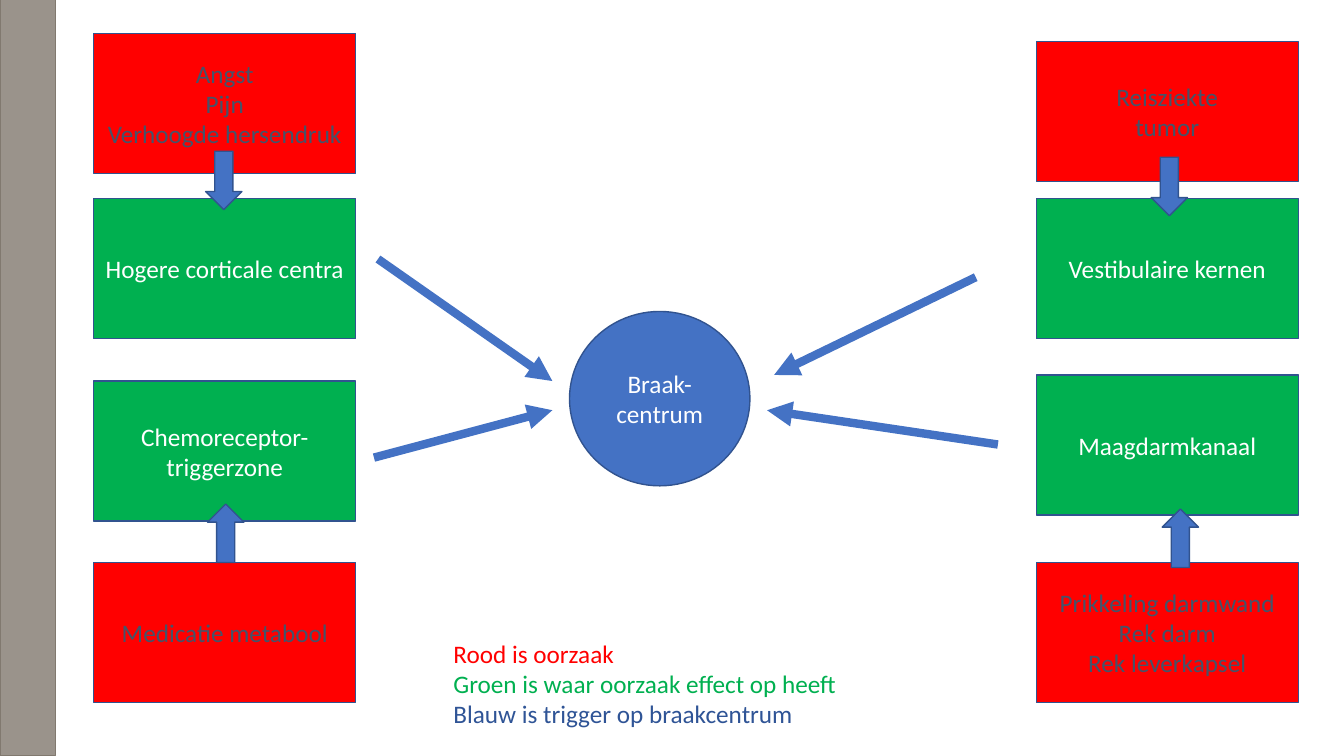
from lxml import etree
from pptx import Presentation
from pptx import util as u
from pptx.dml.color import RGBColor
from pptx.enum import shapes, text
from pptx.oxml.ns import qn

COLS, ROWS = 40, 30
BLUE, EDGE, RED, GREEN = "4472C4", "31538F", "FF0000", "00B050"
SLATE, NAVY, TAUPE, WHITE = "44546A", "2F5496", "81796F", "FFFFFF"
KIND = shapes.MSO_SHAPE


def tint(code):
    return RGBColor.from_string(code)


def write(frame, lines, size=18, font="Calibri", colors=(WHITE,),
          align=text.PP_ALIGN.CENTER, anchor=text.MSO_ANCHOR.MIDDLE):
    """Put one paragraph per line; the colours are used in turn."""
    frame.word_wrap = True
    frame.vertical_anchor = anchor
    for i, line in enumerate(lines):
        para = frame.paragraphs[0] if i == 0 else frame.add_paragraph()
        para.alignment = align
        run = para.add_run()
        run.text = line
        run.font.size = u.Pt(size)
        run.font.name = font
        run.font.color.rgb = tint(colors[i % len(colors)])


class Board:
    """A slide on a grid of COLS by ROWS, with one shared style."""

    def __init__(self, deck):
        self.slide = deck.slides.add_slide(deck.slide_layouts[6])
        self.col = deck.slide_width / COLS
        self.row = deck.slide_height / ROWS

    def spot(self, *cells):
        """Turn column, row pairs into lengths."""
        return [round(c * (self.row if i % 2 else self.col))
                for i, c in enumerate(cells)]

    def shape(self, kind, area, fill, edge=EDGE, width=1):
        item = self.slide.shapes.add_shape(kind, *self.spot(*area))
        item.shadow.inherit = False
        item.fill.solid()
        item.fill.fore_color.rgb = tint(fill)
        item.line.color.rgb = tint(edge)
        item.line.width = u.Pt(width)
        return item

    def box(self, left, top, fill, lines):
        item = self.shape(KIND.RECTANGLE, (left, top, 7.8, 5.56), fill)
        write(item.text_frame, lines,
              colors=(SLATE if fill == RED else WHITE,))

    def hub(self, area, label):
        item = self.shape(KIND.OVAL, area, BLUE)
        write(item.text_frame, [label])

    def block(self, left, top, turn):
        item = self.shape(KIND.UP_ARROW, (left, top, 1.08, 2.32), BLUE)
        item.rotation = turn

    def arrow(self, *ends):
        item = self.slide.shapes.add_connector(
            shapes.MSO_CONNECTOR.STRAIGHT, *self.spot(*ends))
        item.line.color.rgb = tint(BLUE)
        item.line.width = u.Pt(6)
        props = item.element.spPr
        etree.SubElement(props.find(qn("a:ln")), qn("a:tailEnd"),
                         type="triangle")
        etree.SubElement(props, qn("a:effectLst"))

    def legend(self, area, lines, colors):
        item = self.slide.shapes.add_textbox(*self.spot(*area))
        write(item.text_frame, lines, colors=colors,
              align=text.PP_ALIGN.LEFT, anchor=text.MSO_ANCHOR.TOP)

    def band(self, width):
        item = self.shape(KIND.RECTANGLE, (0, 0, width, ROWS), TAUPE,
                          TAUPE, 0.75)
        paint = item.element.spPr.find(qn("a:solidFill"))[0]
        etree.SubElement(paint, qn("a:alpha"), val="80000")


def main():
    deck = Presentation()
    deck.slide_width, deck.slide_height = u.Inches(13.33), u.Inches(7.5)
    board = Board(deck)

    board.hub((16.95, 12.36, 5.37, 6.92), "Braak-centrum")

    stacks = {
        2.79: [
            (1.32, RED, ["Angst", "Pijn", "Verhoogde hersendruk"]),
            (7.88, GREEN, ["Hogere corticale centra"]),
            (15.12, GREEN, ["Chemoreceptor-", "triggerzone"]),
            (22.32, RED, ["Medicatie metabool"]),
        ],
        30.84: [
            (1.64, RED, ["Reisziekte", "tumor"]),
            (7.88, GREEN, ["Vestibulaire kernen"]),
            (14.88, GREEN, ["Maagdarmkanaal"]),
            (22.32, RED, ["Prikkeling darmwand", "Rek darm",
                          "Rek leverkapsel"]),
        ],
    }
    for left, stack in stacks.items():
        for top, fill, lines in stack:
            board.box(left, top, fill, lines)

    for left, top, turn in [(6.18, 20, 0), (34.59, 20.2, 0),
                            (6.12, 6, 180), (34.26, 6.24, 180)]:
        board.block(left, top, turn)

    for ends in [(29.04, 11, 23.04, 14.88), (11.25, 10.28, 16.44, 15.12),
                 (11.13, 18.16, 16.44, 16.28), (29.7, 17.64, 22.83, 16.28)]:
        board.arrow(*ends)

    board.legend((13.2, 25.12, 15.06, 4.04),
                 ["Rood is oorzaak", "Groen is waar oorzaak effect op heeft",
                  "Blauw is trigger op braakcentrum"],
                 (RED, GREEN, NAVY))
    board.band(1.65)
    deck.save("out.pptx")


if __name__ == "__main__":
    main()
